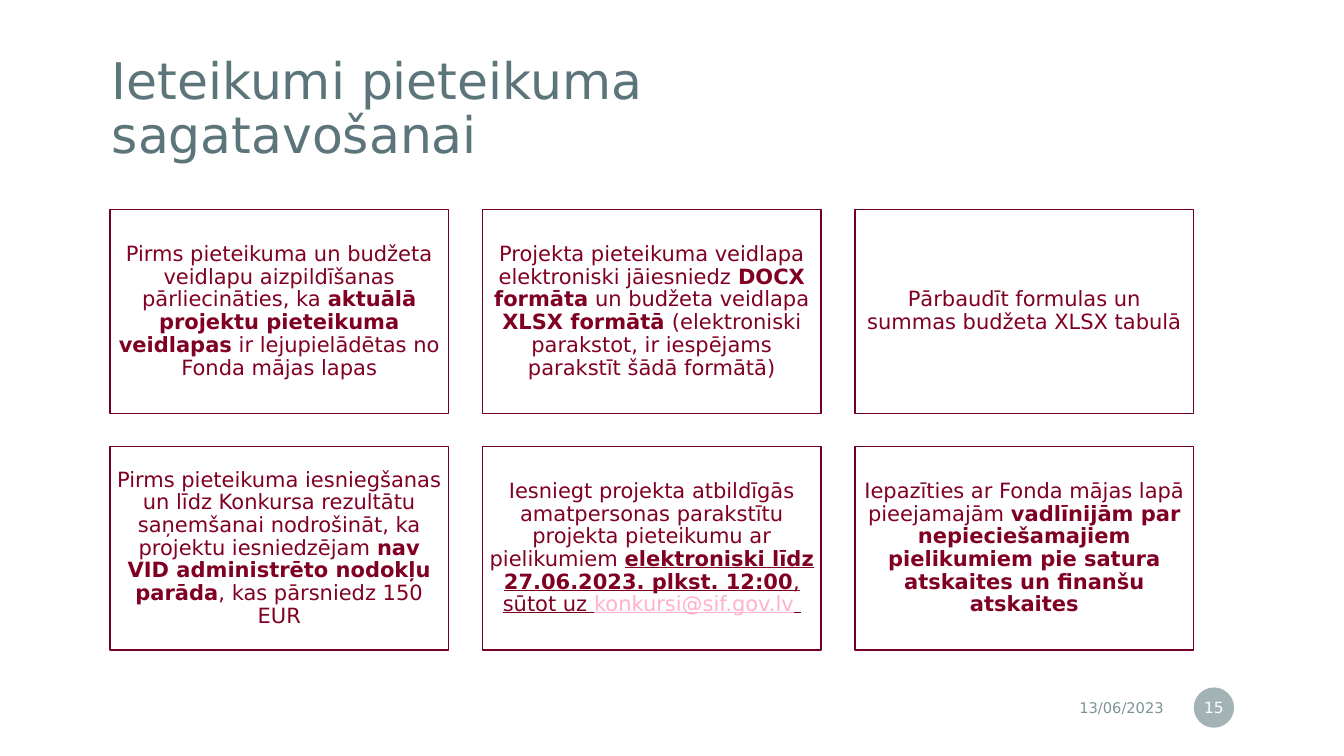
from lxml.etree import SubElement
from pptx import Presentation
from pptx.dml.color import RGBColor
from pptx.enum.shapes import MSO_SHAPE
from pptx.enum.text import MSO_ANCHOR, PP_ALIGN
from pptx.oxml.ns import qn
from pptx.util import Inches, Pt

FONT = "DejaVu Sans"
COLORS = {
    "title": "5B757A",
    "footer": "7C9396",
    "white": "FFFFFF",
    "card_line": "740021",
    "card_text": "800024",
    "email": "FFB2C8",
}

BOLD = {"bold": True}
UNDERLINED = {"underline": True}
# Each card is a list of (text, format) runs
ADVICE = [
    [("Pirms pieteikuma un budžeta veidlapu aizpildīšanas pārliecināties, ka ", {}),
     ("aktuālā projektu pieteikuma veidlapas", BOLD),
     (" ir lejupielādētas no Fonda mājas lapas", {})],
    [("Projekta pieteikuma veidlapa elektroniski jāiesniedz ", {}),
     ("DOCX formāta", BOLD),
     (" un budžeta veidlapa ", {}),
     ("XLSX formātā ", BOLD),
     ("(elektroniski parakstot, ir iespējams parakstīt šādā formātā)", {})],
    [("Pārbaudīt formulas un summas budžeta XLSX tabulā", {})],
    [("Pirms pieteikuma iesniegšanas un līdz Konkursa rezultātu saņemšanai "
      "nodrošināt, ka projektu iesniedzējam ", {}),
     ("nav VID administrēto nodokļu parāda", BOLD),
     (", kas pārsniedz 150 EUR", {})],
    [("Iesniegt projekta atbildīgās amatpersonas parakstītu projekta pieteikumu "
      "ar pielikumiem ", {}),
     ("elektroniski līdz 27.06.2023. plkst. 12:00", BOLD | UNDERLINED),
     (", sūtot uz ", UNDERLINED),
     ("konkursi@sif.gov.lv", UNDERLINED | {"color": "email"}),
     (" ", UNDERLINED)],
    [("Iepazīties ar Fonda mājas lapā pieejamajām ", {}),
     ("vadlīnijām par nepieciešamajiem pielikumiem pie satura atskaites un "
      "finanšu atskaites", BOLD)],
]


def rgb(name):
    return RGBColor.from_string(COLORS[name])


def write(shape, runs, size, color, align=PP_ALIGN.LEFT, spacing=1.0, inset=(0.1, 0.05)):
    """Fill a shape with one paragraph made of (text, format) runs."""
    frame = shape.text_frame
    frame.word_wrap = True
    frame.vertical_anchor = MSO_ANCHOR.MIDDLE
    frame.margin_left = frame.margin_right = Inches(inset[0])
    frame.margin_top = frame.margin_bottom = Inches(inset[1])
    paragraph = frame.paragraphs[0]
    paragraph.alignment = align
    paragraph.line_spacing = spacing
    for text, style in runs:
        run = paragraph.add_run()
        run.text = text
        run.font.name = FONT
        run.font.size = Pt(size)
        run.font.bold = style.get("bold", False)
        run.font.underline = style.get("underline", False)
        run.font.color.rgb = rgb(style.get("color", color))


def add_filled(slide, kind, box, fill):
    shape = slide.shapes.add_shape(kind, *map(Inches, box))
    shape.shadow.inherit = False
    shape.fill.solid()
    shape.fill.fore_color.rgb = rgb(fill)
    return shape


def add_title(slide, box):
    title = slide.shapes.add_textbox(*map(Inches, box))
    write(title, [("Ieteikumi pieteikuma sagatavošanai", {})], 36, "title",
          spacing=0.9, inset=(0.2, 0.2))


def add_advice_grid(slide, box, columns=3, card_width=3.36, card_height=2.02):
    left, top, width, height = box
    rows = len(ADVICE) // columns
    step_x = (width - card_width) / (columns - 1)
    step_y = (height - card_height) / (rows - 1)
    for index, runs in enumerate(ADVICE):
        row, column = divmod(index, columns)
        card_box = (left + column * step_x, top + row * step_y, card_width, card_height)
        card = add_filled(slide, MSO_SHAPE.RECTANGLE, card_box, "white")
        card.line.color.rgb = rgb("card_line")
        card.line.width = Pt(1)
        write(card, runs, 15, "card_text", PP_ALIGN.CENTER, 0.9, (0.06, 0.06))


def add_footer(slide, box):
    left, top, width, height = box
    badge_size = 0.4
    # Date
    date = slide.shapes.add_textbox(*map(Inches, (left, top + 0.02, 3.01, 0.35)))
    write(date, [("13/06/2023", {})], 10.5, "footer", PP_ALIGN.RIGHT)
    # Page number on a translucent disc
    badge_box = (left + width - badge_size, top, badge_size, height)
    badge = add_filled(slide, MSO_SHAPE.OVAL, badge_box, "footer")
    badge.line.fill.background()
    fill_color = badge.fill._xPr.find(qn("a:solidFill"))[0]
    SubElement(fill_color, qn("a:alpha"), val="70000")
    write(badge, [("15", {})], 11, "white", PP_ALIGN.CENTER, inset=(0.02, 0.05))


def main():
    deck = Presentation()
    deck.slide_width, deck.slide_height = Inches(13.33), Inches(7.5)
    slide = deck.slides.add_slide(deck.slide_layouts[6])
    add_title(slide, (0.91, 0.48, 8.73, 1.23))
    add_advice_grid(slide, (1.09, 2.08, 10.75, 4.37))
    add_footer(slide, (8.63, 6.82, 3.61, 0.4))
    deck.save("out.pptx")


if __name__ == "__main__":
    main()
